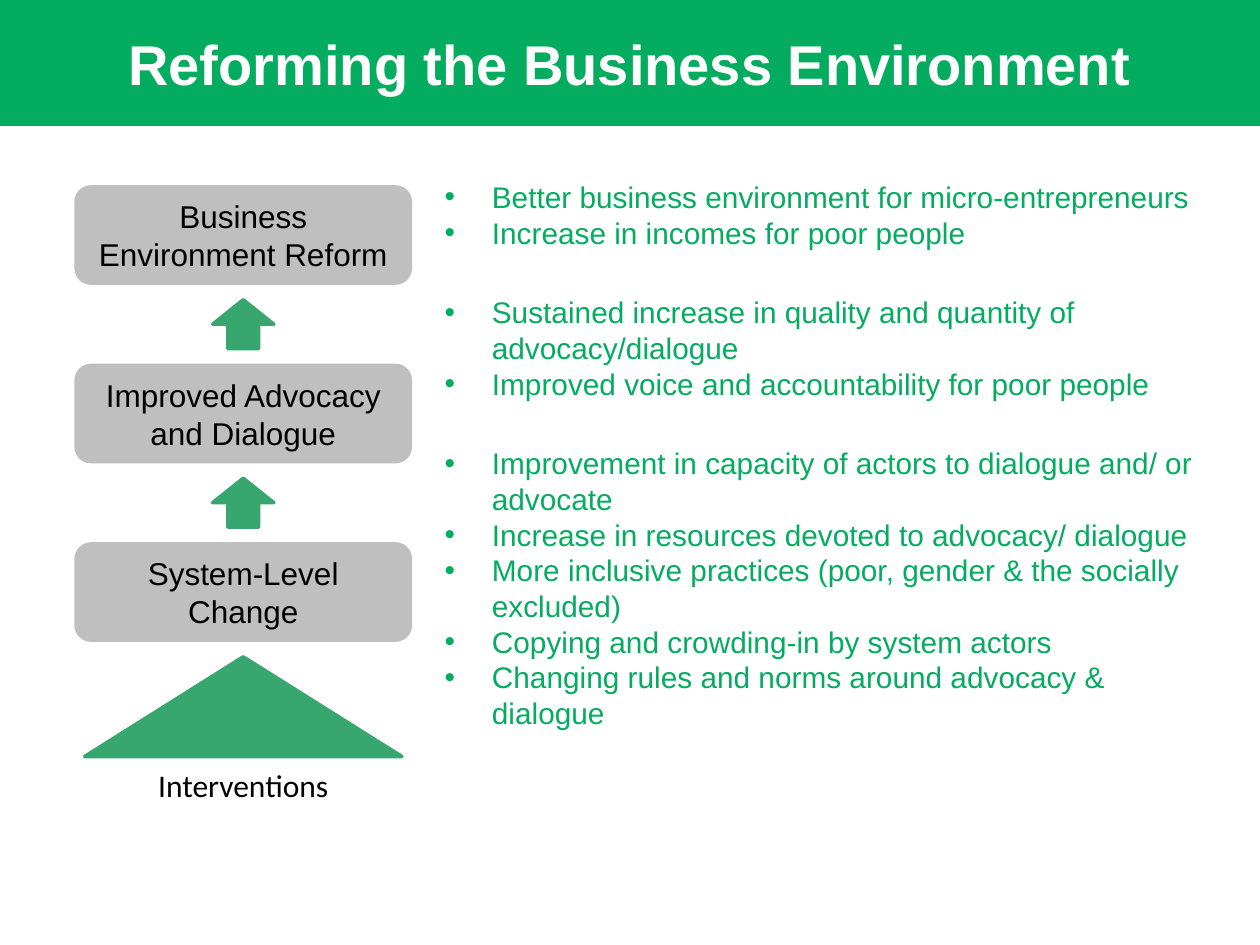
from lxml.etree import SubElement
from pptx import Presentation
from pptx.dml.color import RGBColor
from pptx.enum.shapes import MSO_SHAPE as Shape
from pptx.enum.text import MSO_ANCHOR as Anchor, PP_ALIGN as Align
from pptx.oxml.ns import qn
from pptx.util import Pt

TITLE = "Reforming the Business Environment"
LEVELS = ["Business Environment Reform", "Improved Advocacy and Dialogue", "System-Level Change"]
BASE = "Interventions"
OUTCOMES = [
    ["Better business environment for micro-entrepreneurs",
     "Increase in incomes for poor people"],
    ["Sustained increase in quality and quantity of advocacy/dialogue",
     "Improved voice and accountability for poor people"],
    ["Improvement in capacity of actors to dialogue and/ or advocate",
     "Increase in resources devoted to advocacy/ dialogue",
     "More inclusive practices (poor, gender & the socially excluded)",
     "Copying and crowding-in by system actors",
     "Changing rules and norms around advocacy & dialogue"],
]
THEME = {
    "green": "04AC60", "arrow": "37A76F", "card": "BFBFBF", "white": "FFFFFF", "black": "000000",
    "font": "Arial", "base_font": "Calibri", "title": 32, "label": 18, "bullet": 17, "leading": 1.2,
}
PAGE_WIDTH, PAGE_HEIGHT, BANNER_HEIGHT = 720, 540, 72
CENTER, STACK_TOP, GAP = 139, 105.8, 8.5
CARD, ARROW, TRIANGLE, BASE_BOX = (193, 57), (35, 28), (181.4, 57), (116.6, 28.8)
BULLET_INDENT, GROUP_GAP = 27, 25.2


def color(name):
    return RGBColor.from_string(THEME[name])


def add_block(page, kind, left, top, size, fill, line=None):
    block = page.shapes.add_shape(kind, Pt(left), Pt(top), Pt(size[0]), Pt(size[1]))
    block.shadow.inherit = False
    block.fill.solid()
    block.fill.fore_color.rgb = color(fill)
    if line:
        block.line.color.rgb = color(line)
        block.line.width = Pt(2)
    else:
        block.line.fill.background()
    return block


def style(para, size, ink, font="font", bold=False):
    para.font.size = Pt(THEME[size])
    para.font.name = THEME[font]
    para.font.bold = bold
    para.font.color.rgb = color(ink)


def write_label(shape, text, size, ink, font="font", bold=False):
    frame = shape.text_frame
    frame.text = text
    frame.vertical_anchor = Anchor.MIDDLE
    para = frame.paragraphs[0]
    para.alignment = Align.CENTER
    style(para, size, ink, font, bold)
    return para


def add_stack(page):
    top = STACK_TOP
    for index, level in enumerate(LEVELS):
        if index:
            add_block(page, Shape.UP_ARROW, CENTER - ARROW[0] / 2, top, ARROW, "arrow", "arrow")
            top += ARROW[1] + GAP
        card = add_block(page, Shape.ROUNDED_RECTANGLE, CENTER - CARD[0] / 2, top, CARD, "card")
        para = write_label(card, level, "label", "black")
        para.line_spacing = Pt(THEME["label"] * THEME["leading"])
        top += CARD[1] + GAP
    add_block(page, Shape.ISOSCELES_TRIANGLE, CENTER - TRIANGLE[0] / 2, top, TRIANGLE, "arrow", "arrow")
    top += TRIANGLE[1] + 2
    box = page.shapes.add_textbox(
        Pt(CENTER - BASE_BOX[0] / 2), Pt(top), Pt(BASE_BOX[0]), Pt(BASE_BOX[1]))
    box.text_frame.word_wrap = False
    write_label(box, BASE, "label", "black", "base_font")


def add_outcomes(page):
    frame = page.shapes.add_textbox(Pt(247), Pt(98.6), Pt(448), Pt(364.3)).text_frame
    frame.word_wrap = True
    frame.text = "\n".join(item for group in OUTCOMES for item in group)
    openers = [group[0] for group in OUTCOMES[1:]]
    for para in frame.paragraphs:
        para.line_spacing = Pt(THEME["bullet"] * THEME["leading"])
        para.space_before = Pt(GROUP_GAP if para.text in openers else 0)
        props = para._p.get_or_add_pPr()
        props.set("marL", str(Pt(BULLET_INDENT)))
        props.set("indent", str(-Pt(BULLET_INDENT)))
        SubElement(props, qn("a:buFont"), typeface=THEME["font"])
        SubElement(props, qn("a:buChar"), char="•")
        style(para, "bullet", "green")


def main():
    """Build the business environment reform slide."""
    deck = Presentation()
    deck.slide_width, deck.slide_height = Pt(PAGE_WIDTH), Pt(PAGE_HEIGHT)
    page = deck.slides.add_slide(deck.slide_layouts[6])
    banner = add_block(page, Shape.RECTANGLE, 0, 0, (PAGE_WIDTH, BANNER_HEIGHT), "green")
    write_label(banner, TITLE, "title", "white", bold=True)
    add_outcomes(page)
    add_stack(page)
    deck.save("out.pptx")


if __name__ == "__main__":
    main()
